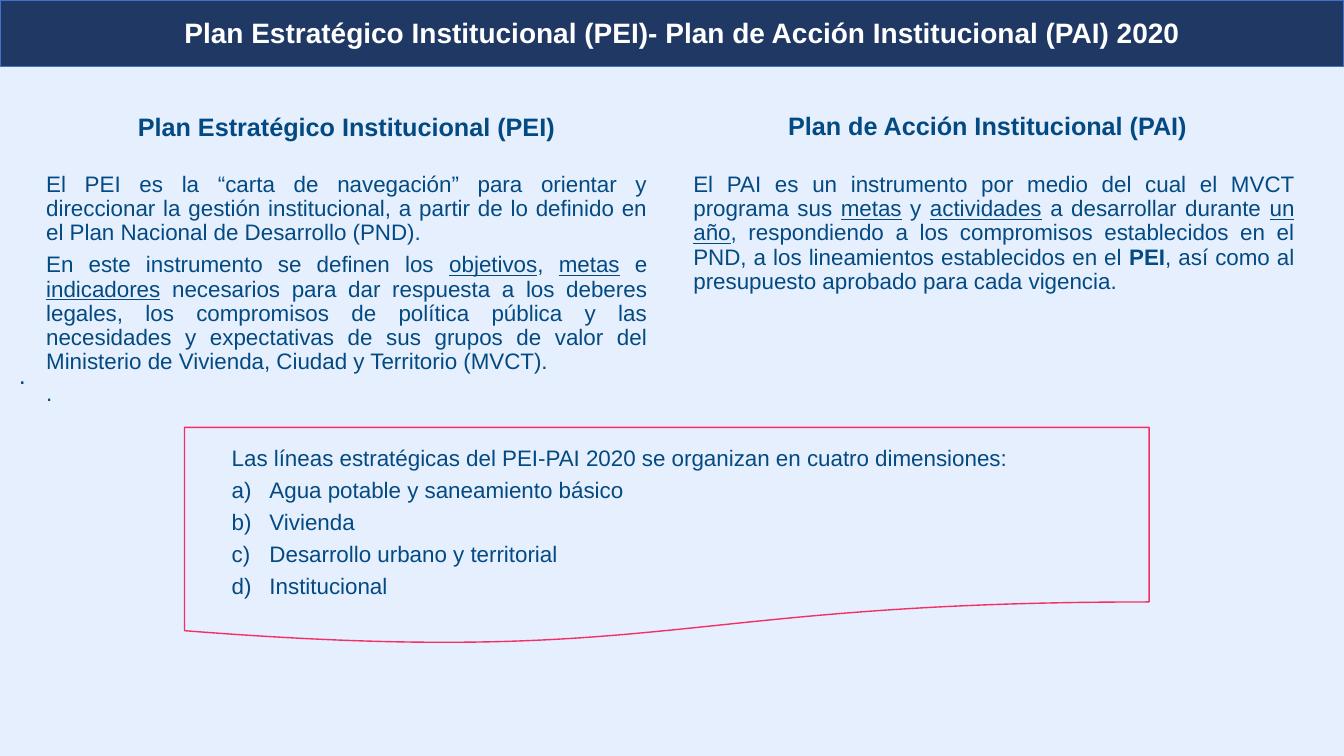
from dataclasses import dataclass

from lxml.etree import SubElement
from pptx import Presentation
from pptx.dml.color import RGBColor
from pptx.enum.shapes import MSO_SHAPE as Shape
from pptx.enum.text import MSO_ANCHOR as Anchor, PP_ALIGN as Align
from pptx.oxml.ns import qn
from pptx.util import Pt


@dataclass(frozen=True)
class Theme:
    font: str = "Arial"
    background: str = "E6EFFD"
    banner: str = "203864"
    banner_line: str = "4472C4"
    frame_line: str = "F42F63"
    text: str = "034A83"
    title_text: str = "FFFFFF"
    title_size: float = 20
    heading_size: float = 18
    body_size: float = 16
    line_spacing: float = 0.9
    space_after: float = 5.6
    list_indent: float = 27


def color(value):
    return RGBColor.from_string(value)


def underlined(text):
    return text, "underline"


def bold(text):
    return text, "bold"


class SlideBuilder:
    def __init__(self, slide, theme):
        self.slide = slide
        self.theme = theme
        fill = slide.background.fill
        fill.solid()
        fill.fore_color.rgb = color(theme.background)

    def shape(self, kind, box, line, fill=None):
        shape = self.slide.shapes.add_shape(kind, *map(Pt, box))
        shape.shadow.inherit = False
        if fill:
            shape.fill.solid()
            shape.fill.fore_color.rgb = color(fill)
        else:
            shape.fill.background()
        shape.line.color.rgb = color(line)
        shape.line.width = Pt(1)

    def text(self, box, paragraphs, size, text_color=None, is_bold=False,
             align=Align.JUSTIFY, anchor=Anchor.TOP, inset=None, list_from=None):
        """Each paragraph is a list of runs; those from list_from on are lettered."""
        frame = self.slide.shapes.add_textbox(*map(Pt, box)).text_frame
        frame.word_wrap = True
        frame.vertical_anchor = anchor
        if inset is not None:
            frame.margin_left = frame.margin_right = Pt(inset)
            frame.margin_top = frame.margin_bottom = Pt(inset)
        for index, runs in enumerate(paragraphs):
            paragraph = frame.add_paragraph() if index else frame.paragraphs[0]
            paragraph.alignment = align
            paragraph.line_spacing = self.theme.line_spacing
            paragraph.space_after = Pt(self.theme.space_after)
            if list_from is not None and index >= list_from:
                self.letter(paragraph)
            for item in runs:
                content, style = (item, None) if isinstance(item, str) else item
                run = paragraph.add_run()
                run.text = content
                font = run.font
                font.name = self.theme.font
                font.size = Pt(size)
                font.color.rgb = color(text_color or self.theme.text)
                font.bold = is_bold or style == "bold"
                font.underline = style == "underline"

    def letter(self, paragraph):
        """Number the paragraph a), b), c) with a hanging indent."""
        properties = paragraph._p.get_or_add_pPr()
        indent = Pt(self.theme.list_indent)
        properties.set("marL", str(indent))
        properties.set("indent", str(-indent))
        SubElement(properties, qn("a:buFont"), typeface="+mj-lt")
        SubElement(properties, qn("a:buAutoNum"), type="alphaLcParenR")

    def banner(self, title):
        theme = self.theme
        self.shape(Shape.RECTANGLE, (0, 0, 960, 47.5), theme.banner_line, theme.banner)
        self.text((124.6, 11.5, 748.8, 25.9), [[title]], theme.title_size,
                  theme.title_text, True, Align.LEFT, Anchor.MIDDLE)

    def heading(self, left, top, title):
        self.text((left, top, 325.4, 26.6), [[title]], self.theme.heading_size,
                  is_bold=True)

    def body(self, box, paragraphs, list_from=None):
        self.text(box, paragraphs, self.theme.body_size, list_from=list_from)


PEI_TEXT = [
    ["El PEI es la “carta de navegación” para orientar y direccionar la gestión "
     "institucional, a partir de lo definido en el Plan Nacional de Desarrollo (PND)."],
    ["En este instrumento se definen los ", underlined("objetivos"), ", ",
     underlined("metas"), " e ", underlined("indicadores"),
     " necesarios para dar respuesta a los deberes legales, los compromisos de "
     "política pública y las necesidades y expectativas de sus grupos de valor del "
     "Ministerio de Vivienda, Ciudad y Territorio (MVCT)."],
    ["."],
]
PAI_TEXT = [
    ["El PAI es un instrumento por medio del cual el MVCT programa sus ",
     underlined("metas"), " y ", underlined("actividades"),
     " a desarrollar durante ", underlined("un año"),
     ", respondiendo a los compromisos establecidos en el PND, a los lineamientos "
     "establecidos en el ", bold("PEI"),
     ", así como al presupuesto aprobado para cada vigencia."],
]
DIMENSIONS = [
    ["Las líneas estratégicas del PEI-PAI 2020 se organizan en cuatro dimensiones:"],
    ["Agua potable y saneamiento básico"],
    ["Vivienda"],
    ["Desarrollo urbano y territorial"],
    ["Institucional"],
]


def main():
    presentation = Presentation()
    presentation.slide_width = Pt(960)
    presentation.slide_height = Pt(540)
    slide = presentation.slides.add_slide(presentation.slide_layouts[6])
    theme = Theme()
    builder = SlideBuilder(slide, theme)

    builder.shape(Shape.FLOWCHART_DOCUMENT, (131.8, 305.3, 689, 155.5), theme.frame_line)
    builder.banner("Plan Estratégico Institucional (PEI)- "
                   "Plan de Acción Institucional (PAI) 2020")
    builder.text((12.2, 231.8, 681, 73.4), [["."]], theme.heading_size,
                 anchor=Anchor.MIDDLE, inset=1.4)
    builder.body((25.9, 120.2, 443.5, 202.3), PEI_TEXT)
    builder.body((488.2, 120.2, 443.5, 94.3), PAI_TEXT)
    builder.body((158.4, 316.1, 622, 121.7), DIMENSIONS, list_from=1)
    builder.heading(91.4, 78.5, "Plan Estratégico Institucional (PEI)")
    builder.heading(555.8, 77.8, "Plan de Acción Institucional (PAI)")

    presentation.save("out.pptx")


if __name__ == "__main__":
    main()
